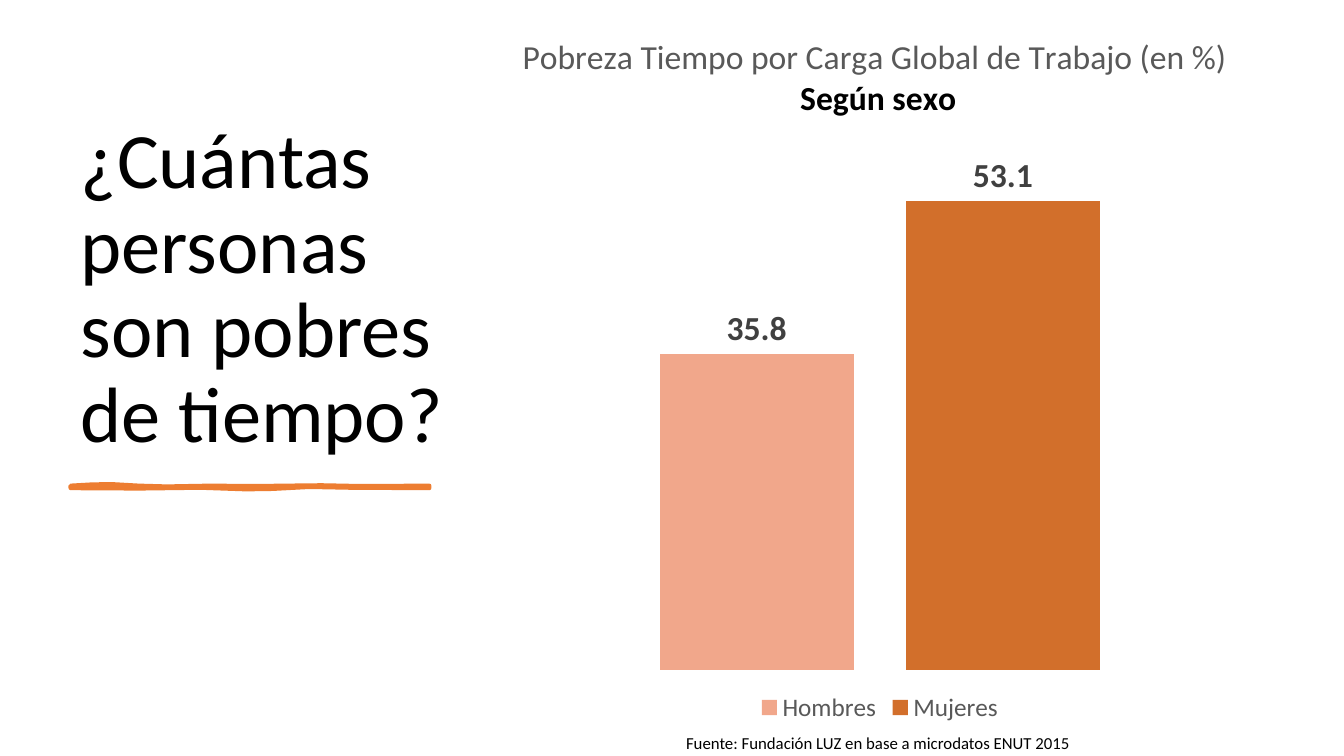
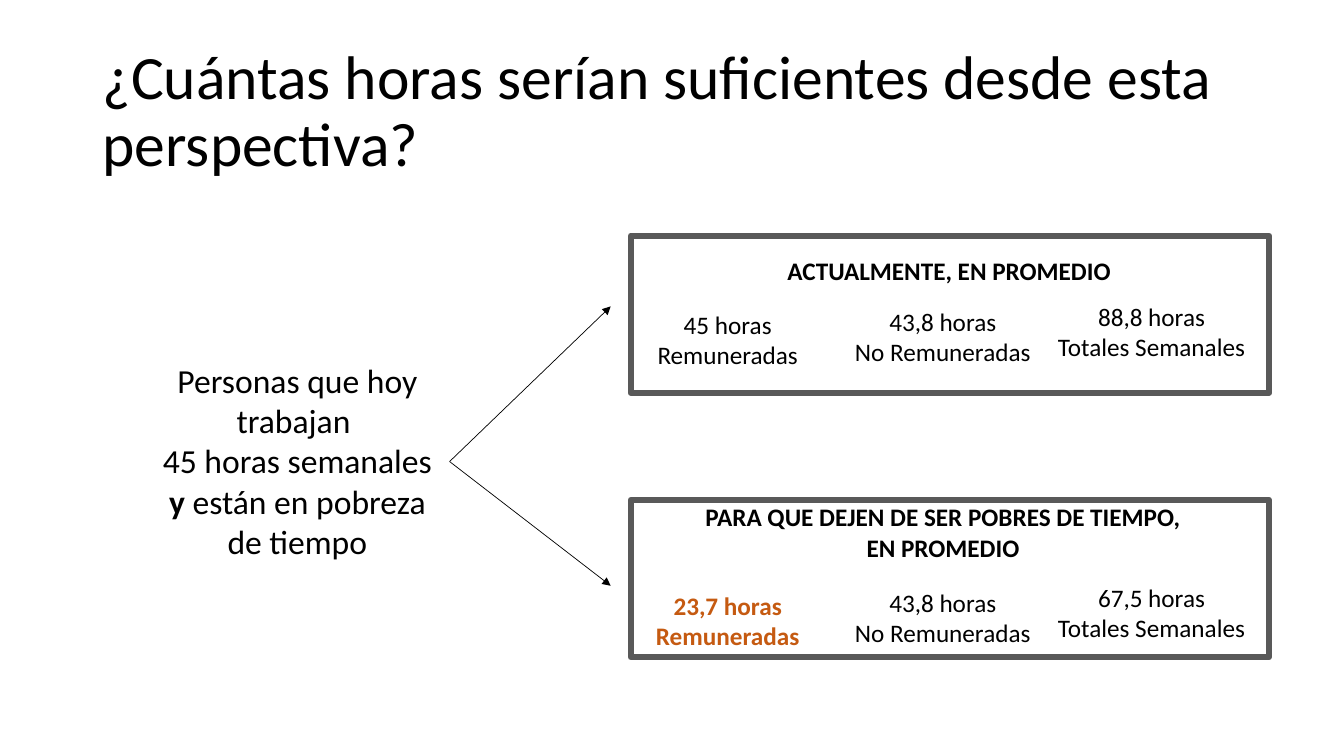
from dataclasses import dataclass

from lxml import etree
from pptx import Presentation
from pptx.chart.data import CategoryChartData as ChartData
from pptx.dml.color import RGBColor as Rgb
from pptx.enum.chart import XL_CHART_TYPE as Kind
from pptx.enum.chart import XL_LABEL_POSITION as Spot
from pptx.enum.chart import XL_LEGEND_POSITION as Side
from pptx.enum.shapes import MSO_CONNECTOR as Link
from pptx.enum.shapes import MSO_SHAPE as Form
from pptx.enum.text import MSO_ANCHOR as Anchor
from pptx.enum.text import MSO_AUTO_SIZE as Fit
from pptx.enum.text import PP_ALIGN as Align
from pptx.oxml.ns import qn
from pptx.util import Cm, Pt


# Colours and type sizes
@dataclass(frozen=True)
class Theme:
    font: str = "Calibri"
    black: str = "000000"
    grey: str = "595959"
    dark: str = "404040"
    accent: str = "ED7D31"
    rust: str = "C55A11"
    men: str = "F1A78B"
    women: str = "D26F2B"
    huge: int = 56
    title: int = 44
    large: int = 24
    body: int = 18
    small: int = 12


THEME = Theme()


def place(node, index, **parts):
    """Give a chart part a fixed place, in fractions of the chart."""
    layout = node.find(qn("c:layout"))
    if layout is None:
        layout = etree.Element(qn("c:layout"))
        node.insert(index, layout)
    manual = etree.SubElement(layout, qn("c:manualLayout"))
    for tag, val in parts.items():
        etree.SubElement(manual, qn("c:" + tag)).set("val", str(val))


class Deck:
    def __init__(self, theme):
        self.theme = theme
        self.prs = Presentation()
        self.prs.slide_width, self.prs.slide_height = Cm(33.87), Cm(19.05)
        self.slide = None

    def style(self, font, size, color, bold=False):
        font.name, font.size, font.bold = self.theme.font, Pt(size), bold
        font.color.rgb = Rgb.from_string(color)

    def add_run(self, para, text, size, color=None, bold=False):
        run = para.add_run()
        run.text = text
        self.style(run.font, size, color or self.theme.black, bold)

    def page(self, title, box, size, anchor):
        self.slide = self.prs.slides.add_slide(self.prs.slide_layouts[5])
        head = self.slide.shapes.title
        head.left, head.top, head.width, head.height = map(Cm, box)
        frame = head.text_frame
        frame.word_wrap, frame.auto_size = True, Fit.NONE
        frame.vertical_anchor = anchor
        para = frame.paragraphs[0]
        para.alignment, para.line_spacing = Align.LEFT, 0.9
        self.add_run(para, title, size)

    def text(self, box, lines, size, color=None, align=Align.CENTER):
        """Each line is a list of (text, bold) runs."""
        shape = self.slide.shapes.add_textbox(*map(Cm, box))
        frame = shape.text_frame
        frame.word_wrap = True
        for i, runs in enumerate(lines):
            para = frame.add_paragraph() if i else frame.paragraphs[0]
            para.alignment = align
            for words, bold in runs:
                self.add_run(para, words, size, color, bold)
        return shape

    def frame(self, box):
        shape = self.slide.shapes.add_shape(Form.RECTANGLE, *map(Cm, box))
        shape.shadow.inherit = False
        shape.fill.background()
        shape.line.color.rgb = Rgb.from_string(self.theme.grey)
        shape.line.width = Pt(4.5)

    def arrow(self, start, end):
        """Run from the right side of a box to a point."""
        x, y = map(Cm, end)
        line = self.slide.shapes.add_connector(Link.STRAIGHT, 0, 0, x, y)
        line.begin_connect(start, 3)
        line.line.color.rgb = Rgb.from_string(self.theme.black)
        line.line.width = Pt(0.5)
        etree.SubElement(line.line._get_or_add_ln(), qn("a:tailEnd")).set("type", "triangle")
        etree.SubElement(line._element.spPr, qn("a:effectLst"))

    def stroke(self, points):
        first, *rest = [(Cm(x), Cm(y)) for x, y in points]
        pen = self.slide.shapes.build_freeform(*first)
        pen.add_line_segments(rest, close=True)
        shape = pen.convert_to_shape()
        shape.shadow.inherit = False
        color = Rgb.from_string(self.theme.accent)
        shape.fill.solid()
        shape.fill.fore_color.rgb = color
        shape.line.color.rgb = color
        shape.line.width = Pt(3)
        etree.SubElement(shape.line._get_or_add_ln(), qn("a:round"))

    def columns(self, box, title, series):
        """Titles are (text, colour, bold); series are (name, value, colour)."""
        data = ChartData()
        data.categories = ["1"]
        for name, value, _ in series:
            data.add_series(name, [value])
        chart = self.slide.shapes.add_chart(Kind.COLUMN_CLUSTERED, *map(Cm, box), data).chart
        self.style(chart.font, 10, self.theme.black)

        # Title
        frame = chart.chart_title.text_frame
        for i, (words, color, bold) in enumerate(title):
            para = frame.add_paragraph() if i else frame.paragraphs[0]
            para.alignment = Align.CENTER
            self.add_run(para, words, self.theme.large, color, bold)
        place(chart.chart_title._element, 1, xMode="edge", yMode="edge", x=0.1, y=0.03)

        # Axes and plot
        chart.category_axis.visible = chart.value_axis.visible = False
        chart.value_axis.has_major_gridlines = False
        chart.value_axis.minimum_scale, chart.value_axis.maximum_scale = 0, 60
        plot = chart.plots[0]
        plot.gap_width, plot.overlap, plot.vary_by_categories = 219, -27, False
        area = chart._chartSpace.find(".//" + qn("c:plotArea"))
        place(area, 0, layoutTarget="inner", xMode="edge", yMode="edge",
              x=0.02, y=0.18, w=0.96, h=0.74)

        # Columns and labels
        for bar, (_, _, color) in zip(plot.series, series):
            bar.format.fill.solid()
            bar.format.fill.fore_color.rgb = Rgb.from_string(color)
            labels = bar.data_labels
            labels.show_value, labels.position = True, Spot.OUTSIDE_END
            self.style(labels.font, self.theme.large, self.theme.dark, True)

        # Legend
        chart.has_legend = True
        chart.legend.position = Side.BOTTOM
        chart.legend.include_in_layout = False
        self.style(chart.legend.font, self.theme.body, self.theme.grey)


def share(deck):
    """Share of people who are time poor."""
    t = deck.theme
    deck.page("¿Cuántas personas son pobres de tiempo?", (1.78, 1.78, 9.93, 9.93),
              t.huge, Anchor.BOTTOM)
    deck.stroke([(1.78, 12.24), (2.3, 12.21), (2.8, 12.2), (3.5, 12.24), (4.2, 12.26),
                 (5.3, 12.24), (6.4, 12.25), (7.2, 12.24), (8.1, 12.23), (9.1, 12.25),
                 (10.82, 12.24), (10.82, 12.3), (8.84, 12.29), (7.8, 12.27),
                 (6.86, 12.32), (6.2, 12.33), (5.05, 12.29), (3.5, 12.31), (1.78, 12.3)])
    deck.columns((10.82, 0.28, 22.71, 18.06),
                 [("Pobreza Tiempo por Carga Global de Trabajo (en %) ", t.grey, False),
                  ("Según sexo", t.black, True)],
                 [("Hombres", 35.8, t.men), ("Mujeres", 53.1, t.women)])
    deck.text((17.04, 18.34, 10.26, 0.76),
              [[("Fuente: Fundación LUZ en base a microdatos ENUT 2015", False)]],
              t.small, align=Align.LEFT)


def hours(deck):
    """Hours worked now and hours that would be enough."""
    t = deck.theme
    deck.page("¿Cuántas horas serían suficientes desde esta perspectiva?",
              (2.33, 1.01, 29.21, 3.68), t.title, Anchor.MIDDLE)
    people = deck.text((3.66, 8.94, 7.67, 5.38),
                       [[("Personas que hoy trabajan ", False)],
                        [("45 horas semanales ", False), ("y ", True),
                         ("están en pobreza de tiempo", False)]], t.large)

    # Panels: frame top, first text top, heading and its box, hours, bold colour
    panels = [
        (5.94, 7.47, "ACTUALMENTE, EN PROMEDIO", (19.35, 6.32, 9.14, 1.02),
         ("45", "43,8", "88,8"), None),
        (12.6, 14.55, "PARA QUE DEJEN DE SER POBRES DE TIEMPO, EN PROMEDIO",
         (17.35, 12.52, 12.83, 1.8), ("23,7", "43,8", "67,5"), t.rust),
    ]
    # Columns: label, left, drop, width
    cols = [("Remuneradas", 16.23, 0.2, 4.22),
            ("No Remuneradas", 21.13, 0.13, 5.26),
            ("Totales Semanales", 26.39, 0, 5.26)]
    for top, row, head, box, counts, mark in panels:
        deck.frame((15.9, top, 16.08, 3.96))
        deck.text(box, [[(head, True)]], t.body)
        for i, (count, (label, left, drop, width)) in enumerate(zip(counts, cols)):
            color = mark if i == 0 else None
            bold = color is not None
            deck.text((left, row + drop, width, 1.8),
                      [[(count + " horas", bold)], [(label, bold)]], t.body, color)

    # Arrows to the panels
    for y in (7.72, 14.76):
        deck.arrow(people, (15.39, y))


def main():
    deck = Deck(THEME)
    share(deck)
    hours(deck)
    deck.prs.save("out.pptx")


if __name__ == "__main__":
    main()
